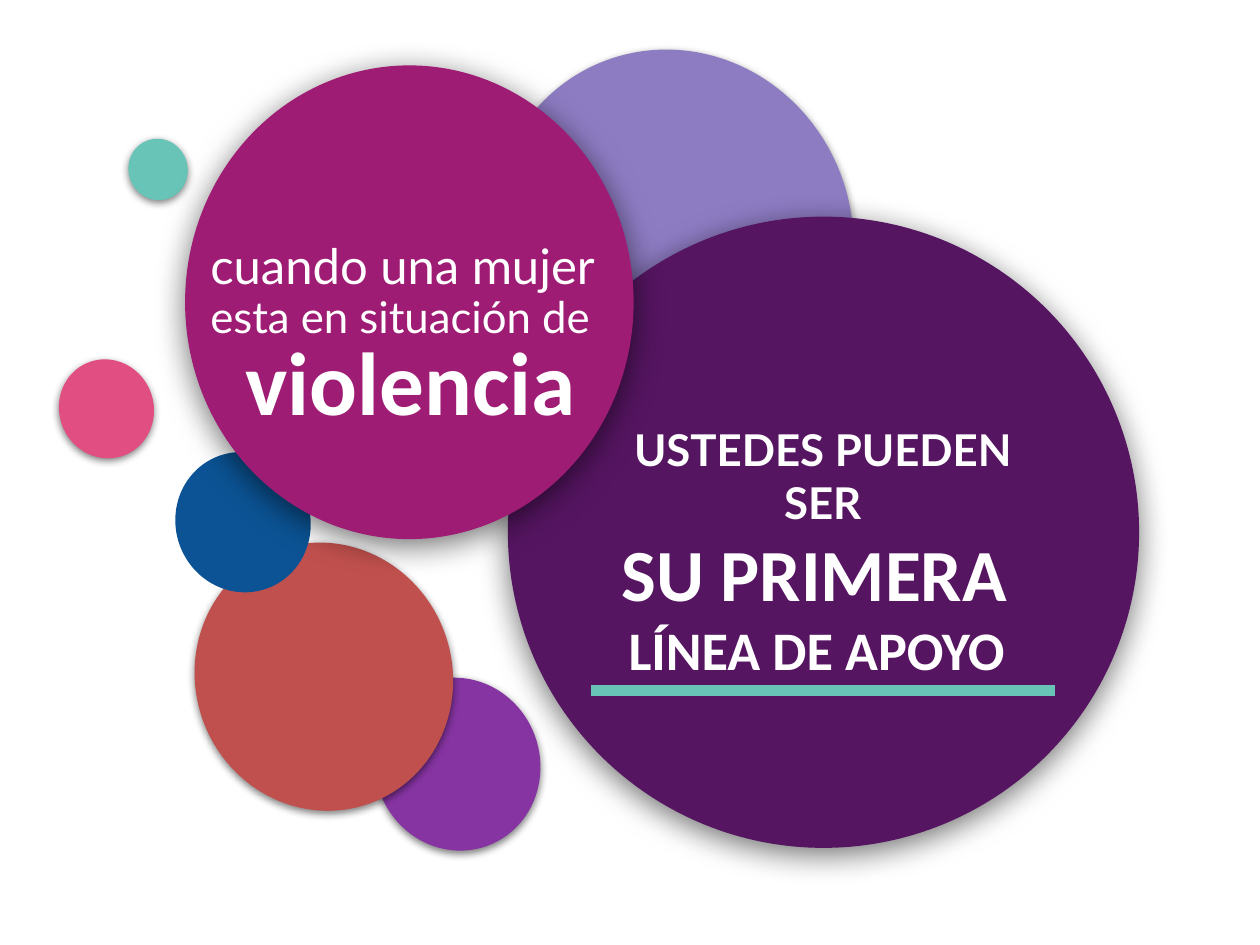
from lxml.etree import SubElement
from pptx import Presentation
from pptx.dml.color import RGBColor
from pptx.enum.shapes import MSO_CONNECTOR, MSO_SHAPE
from pptx.enum.text import MSO_ANCHOR, PP_ALIGN
from pptx.oxml.ns import qn
from pptx.util import Pt

COLORS = {
    "violet": "8634A2", "pink": "E14E81", "red": "C0504D", "lilac": "8E7CC3",
    "blue": "0B5394", "teal": "67C4B7", "plum": "551561", "magenta": "9F1C74",
    "white": "FFFFFF", "black": "000000",
}
# Shadows: opacity in percent, blur and distance in points
SOFT = (50, 4.5, 1.5)
DEEP = (55, 18, 4)


def add_bubble(left, top, width, height, color, rotation=0, shadow=None):
    bubble = slide.shapes.add_shape(
        MSO_SHAPE.OVAL, Pt(left), Pt(top), Pt(width), Pt(height))
    bubble.rotation = rotation
    bubble.fill.solid()
    bubble.fill.fore_color.rgb = RGBColor.from_string(COLORS[color])
    bubble.line.fill.background()
    bubble.shadow.inherit = False
    if shadow:
        opacity, blur, distance = shadow
        effects = bubble.element.spPr.find(qn("a:effectLst"))
        outer = SubElement(effects, qn("a:outerShdw"), blurRad=str(Pt(blur)),
                           dist=str(Pt(distance)), dir="5400000",
                           algn="ctr", rotWithShape="0")
        tint = SubElement(outer, qn("a:srgbClr"), val=COLORS["black"])
        SubElement(tint, qn("a:alpha"), val=str(opacity * 1000))


def add_message(left, top, width, height, inset, align, lines):
    message = slide.shapes.add_textbox(
        Pt(left), Pt(top), Pt(width), Pt(height)).text_frame
    message.word_wrap = True
    message.margin_left = message.margin_right = Pt(inset)
    message.margin_top = message.margin_bottom = Pt(inset)
    for index, (words, size, font, bold) in enumerate(lines):
        paragraph = message.add_paragraph() if index else message.paragraphs[0]
        paragraph.alignment = align
        run = paragraph.add_run()
        run.text = words
        run.font.size = Pt(size)
        run.font.name = font
        run.font.bold = bold
        run.font.color.rgb = RGBColor.from_string(COLORS["white"])
    return message


deck = Presentation()
deck.slide_width, deck.slide_height = Pt(720), Pt(540)
slide = deck.slides.add_slide(deck.slide_layouts[6])

# Small decorative bubbles, back to front
for left, top, width, height, color, shadow in [
    (211.7, 389.5, 99.4, 94.3, "violet", SOFT),
    (32.4, 206.6, 56.9, 54, "pink", SOFT),
    (108, 313.2, 154.1, 146.9, "red", SOFT),
    (275.8, 33.1, 216.7, 205.9, "lilac", SOFT),
    (98.6, 259.9, 80.6, 77, "blue", None),
    (72.7, 79.9, 35.3, 33.8, "teal", SOFT),
]:
    add_bubble(left, top, width, height, color, 250, shadow)

# Support bubble; the deep bottom margin lifts its centred text
add_bubble(290.2, 123.8, 360.7, 360.7, "plum", shadow=DEEP)
support = add_message(329, 265, 282.2, 151.2, 10, PP_ALIGN.CENTER, [
    ("USTEDES PUEDEN SER", 25, "Lato", True),
    ("SU PRIMERA ", 42, "Calibri", True),
    ("LÍNEA DE APOYO ", 31, "Calibri", True),
])
support.vertical_anchor = MSO_ANCHOR.MIDDLE
support.margin_bottom = Pt(60)

# Violence bubble
add_bubble(105.8, 37.4, 256.3, 270.7, "magenta", shadow=DEEP)

# Underline of the support message
underline = slide.shapes.add_connector(
    MSO_CONNECTOR.STRAIGHT, Pt(337.7), Pt(394.6), Pt(602.6), Pt(394.6))
underline.line.color.rgb = RGBColor.from_string(COLORS["teal"])
underline.line.width = Pt(6)
SubElement(underline.element.spPr, qn("a:effectLst"))

# Text of the violence bubble
for left, top, width, height, align, line in [
    (115.2, 129.6, 238.3, 38.9, PP_ALIGN.LEFT,
     ("cuando una mujer", 28, "Lato", False)),
    (115.2, 160.6, 238.3, 45.4, PP_ALIGN.LEFT,
     ("esta en situación de", 25, "Lato", False)),
    (120.2, 181.4, 229, 67.7, PP_ALIGN.CENTER,
     ("violencia", 51, "Calibri", True)),
]:
    add_message(left, top, width, height, 5, align, [line])

deck.save("out.pptx")
